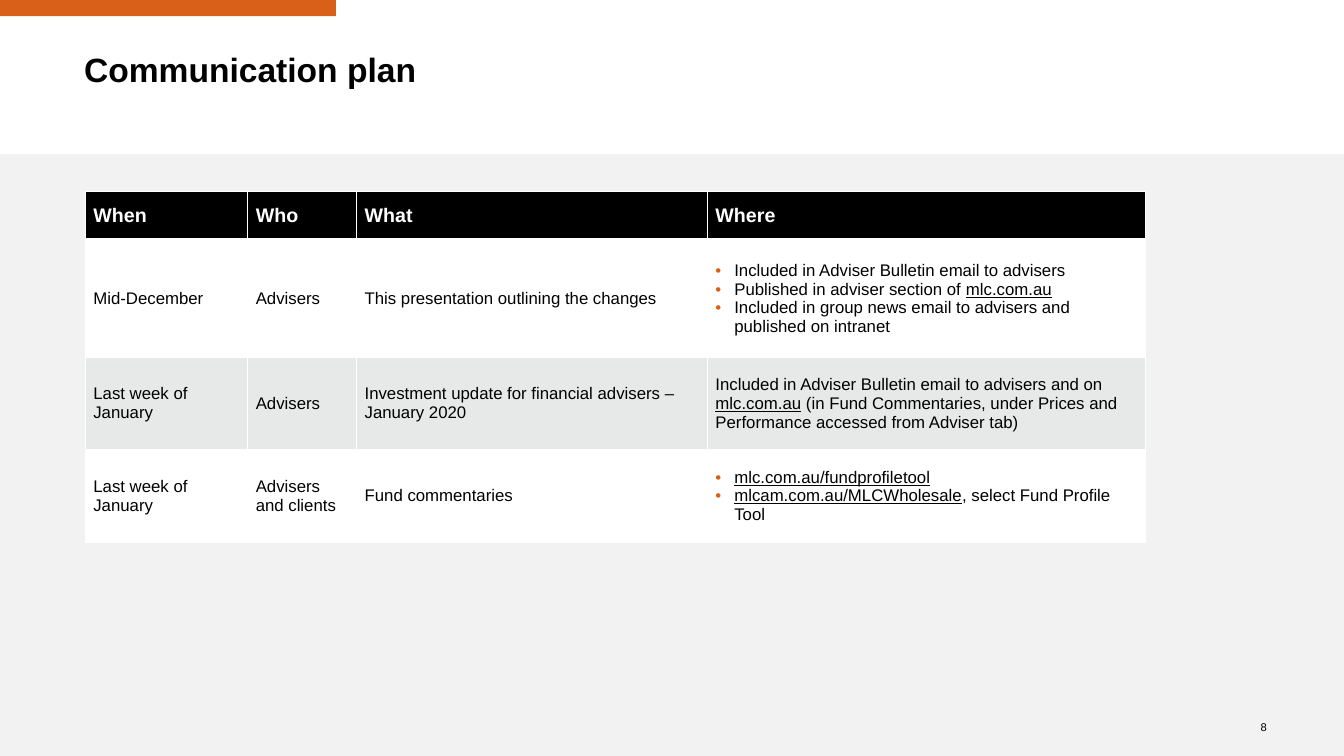
import pptx
import pptx.util
import pptx.dml.color
import pptx.enum.shapes
import pptx.enum.text
import pptx.oxml.ns
import lxml.etree

Pt = pptx.util.Pt
RGBColor = pptx.dml.color.RGBColor
ALIGN = pptx.enum.text.PP_ALIGN
ANCHOR = pptx.enum.text.MSO_ANCHOR

BLACK = RGBColor(0x00, 0x00, 0x00)
WHITE = RGBColor(0xFF, 0xFF, 0xFF)
ORANGE = RGBColor(0xD8, 0x60, 0x18)
PANEL_GREY = RGBColor(0xF2, 0xF2, 0xF2)
BAND_GREY = RGBColor(0xE7, 0xE9, 0xE9)

TITLE_FONT = {"name": "Arial", "size": Pt(24), "bold": True}
HEADER_FONT = {"name": "Arial", "size": Pt(14), "bold": True}
BODY_FONT = {"name": "Arial", "size": Pt(12), "bold": False}
NUMBER_FONT = {"name": "Arial", "size": Pt(8), "bold": False}
NO_MARGINS = dict.fromkeys(
    ("margin_left", "margin_top", "margin_right", "margin_bottom"), 0)
CELL_FORMAT = {**dict.fromkeys(NO_MARGINS, Pt(5.7)),
               "vertical_anchor": ANCHOR.MIDDLE}

COLUMN_WIDTHS = (116, 77.8, 250.6, 313)
ROW_HEIGHTS = (34.6, 83.5, 66.2, 66.2)
BULLET_INDENT = 13.5

# Cells are lists of paragraphs; text between bars is underlined,
# and a leading bullet makes a list item.
PLAN = (
    (["When"], ["Who"], ["What"], ["Where"]),
    (["Mid-December"], ["Advisers"],
     ["This presentation outlining the changes"],
     ["•Included in Adviser Bulletin email to advisers",
      "•Published in adviser section of |mlc.com.au|",
      "•Included in group news email to advisers and published on intranet"]),
    (["Last week of January"], ["Advisers"],
     ["Investment update for financial advisers – January 2020"],
     ["Included in Adviser Bulletin email to advisers and on |mlc.com.au| "
      "(in Fund Commentaries, under Prices and Performance accessed from "
      "Adviser tab)"]),
    (["Last week of January"], ["Advisers and clients"],
     ["Fund commentaries"],
     ["•|mlc.com.au/fundprofiletool|",
      "•|mlcam.com.au/MLCWholesale|, select Fund Profile Tool"]),
)


def apply_format(target, values):
    for name, value in values.items():
        setattr(target, name, value)


def add_element(parent, tag, **attributes):
    return lxml.etree.SubElement(
        parent, pptx.oxml.ns.qn(tag), {k: str(v) for k, v in attributes.items()})


def add_bullet(paragraph):
    properties = paragraph._p.get_or_add_pPr()
    properties.set("marL", str(Pt(BULLET_INDENT)))
    properties.set("indent", str(Pt(-BULLET_INDENT)))
    add_element(add_element(properties, "a:buClr"), "a:srgbClr", val=ORANGE)
    add_element(properties, "a:buFont", typeface="Arial")
    add_element(properties, "a:buChar", char="•")


def write_paragraph(paragraph, text, font, color):
    if text.startswith("•"):
        add_bullet(paragraph)
    for position, part in enumerate(text.lstrip("•").split("|")):
        if part:
            run = paragraph.add_run()
            run.text = part
            apply_format(run.font, font)
            run.font.color.rgb = color
            if position % 2:
                run.font.underline = True


def set_borders(cell, widths):
    properties = cell._tc.get_or_add_tcPr()
    for position, (side, width) in enumerate(widths.items()):
        line = add_element(properties, "a:ln" + side, w=Pt(width))
        add_element(add_element(line, "a:solidFill"), "a:srgbClr", val=WHITE)
        properties.insert(position, line)


def add_block(slide, left, top, width, height, color):
    block = slide.shapes.add_shape(
        pptx.enum.shapes.MSO_SHAPE.RECTANGLE,
        Pt(left), Pt(top), Pt(width), Pt(height))
    block.shadow.inherit = False
    block.fill.solid()
    block.fill.fore_color.rgb = color
    block.line.fill.background()


def place_title(slide, left, top, width, height):
    title = slide.shapes.title
    apply_format(title, {"left": Pt(left), "top": Pt(top),
                         "width": Pt(width), "height": Pt(height)})
    apply_format(title.text_frame, {
        **NO_MARGINS, "word_wrap": True, "vertical_anchor": ANCHOR.TOP,
        "auto_size": pptx.enum.text.MSO_AUTO_SIZE.NONE})
    paragraph = title.text_frame.paragraphs[0]
    apply_format(paragraph, {"alignment": ALIGN.LEFT, "line_spacing": 0.9})
    write_paragraph(paragraph, "Communication plan", TITLE_FONT, BLACK)


def add_page_number(slide, left, top, width, height):
    box = slide.shapes.add_textbox(Pt(left), Pt(top), Pt(width), Pt(height))
    apply_format(box.text_frame, {**NO_MARGINS, "word_wrap": False,
                                  "vertical_anchor": ANCHOR.MIDDLE})
    paragraph = box.text_frame.paragraphs[0]
    paragraph.alignment = ALIGN.RIGHT
    write_paragraph(paragraph, "8", NUMBER_FONT, BLACK)


def fill_cell(cell, texts, row):
    header = row == 0
    apply_format(cell, CELL_FORMAT)
    cell.fill.solid()
    cell.fill.fore_color.rgb = (
        BLACK if header else WHITE if row % 2 else BAND_GREY)
    set_borders(cell, {"L": 1, "R": 1, "T": 3 if row == 1 else 1,
                       "B": 3 if header else 1})
    frame = cell.text_frame
    for position, text in enumerate(texts):
        paragraph = frame.add_paragraph() if position else frame.paragraphs[0]
        write_paragraph(paragraph, text, HEADER_FONT if header else BODY_FONT,
                        WHITE if header else BLACK)


def add_plan_table(slide, left, top):
    table = slide.shapes.add_table(
        len(ROW_HEIGHTS), len(COLUMN_WIDTHS), Pt(left), Pt(top),
        Pt(sum(COLUMN_WIDTHS)), Pt(sum(ROW_HEIGHTS))).table
    for column, width in zip(table.columns, COLUMN_WIDTHS):
        column.width = Pt(width)
    for row, height in zip(table.rows, ROW_HEIGHTS):
        row.height = Pt(height)
    for row, contents in enumerate(PLAN):
        for column, texts in enumerate(contents):
            fill_cell(table.cell(row, column), texts, row)


def build_plan_slide(presentation):
    slide = presentation.slides.add_slide(presentation.slide_layouts[5])
    # Background blocks
    add_block(slide, 0, 0, 240, 11.5, ORANGE)
    add_block(slide, 0, 110, 960, 430, PANEL_GREY)
    # Title and page number
    place_title(slide, 60, 38, 765, 41)
    add_page_number(slide, 885, 512, 20, 15)
    # Plan table
    add_plan_table(slide, 61, 137)


def main():
    presentation = pptx.Presentation()
    presentation.slide_width = Pt(960)
    presentation.slide_height = Pt(540)
    build_plan_slide(presentation)
    presentation.save("out.pptx")


if __name__ == "__main__":
    main()
